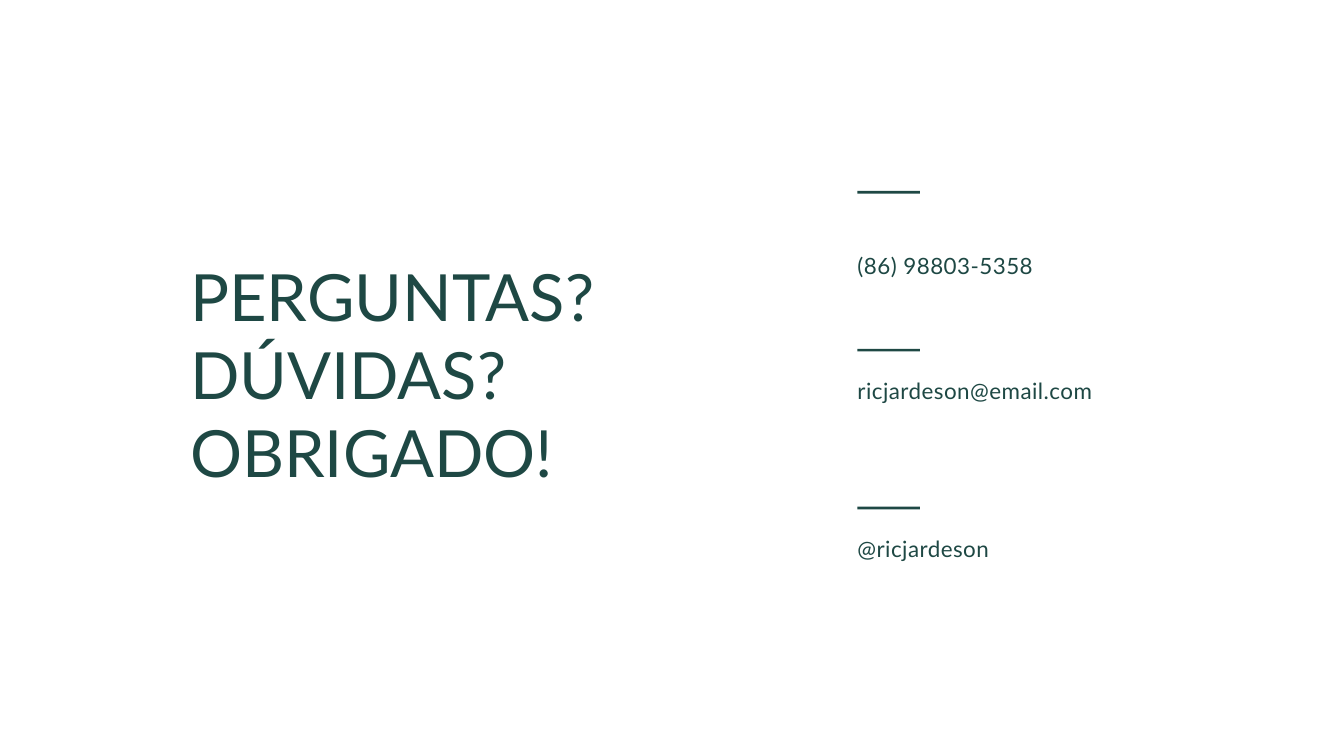
from pptx import Presentation
from pptx.dml.color import RGBColor
from pptx.enum.shapes import MSO_SHAPE as Shape
from pptx.enum.text import MSO_AUTO_SIZE as AutoSize
from pptx.util import Inches, Pt

DARK_GREEN = RGBColor(0x1E, 0x48, 0x44)
WHITE = RGBColor(0xFF, 0xFF, 0xFF)
FONT = "Lato"

CLOSING_LINES = ["PERGUNTAS?", "DÚVIDAS?", "OBRIGADO!"]
# Each contact with the distance from its rule to its text, in inches
CONTACTS = [
    ("(86) 98803-5358", 0.84),
    ("ricjardeson@email.com", 0.36),
    ("@ricjardeson", 0.36),
]


def add_text(slide, box, lines, size, line_spacing, tracking=0):
    """Add one paragraph per line; box is in inches, the other lengths in points."""
    text_box = slide.shapes.add_textbox(*map(Inches, box))
    frame = text_box.text_frame
    frame.word_wrap = True
    frame.auto_size = AutoSize.SHAPE_TO_FIT_TEXT
    frame.margin_left = frame.margin_right = 0
    frame.margin_top = frame.margin_bottom = 0
    frame.text = "\n".join(lines)
    for paragraph in frame.paragraphs:
        paragraph.line_spacing = Pt(line_spacing)
        for run in paragraph.runs:
            run.font.name = FONT
            run.font.size = Pt(size)
            run.font.color.rgb = DARK_GREEN
            if tracking:
                run._r.get_or_add_rPr().set("spc", str(round(tracking * 100)))


def add_closing_message(slide, box):
    add_text(slide, box, CLOSING_LINES, size=69.7, line_spacing=83.6)


def add_contacts(slide, left, top, width, pitch):
    """Stack the contacts at an equal pitch, each under a short rule."""
    for index, (contact, text_offset) in enumerate(CONTACTS):
        rule_top = top + index * pitch
        rule = slide.shapes.add_shape(
            Shape.RECTANGLE, Inches(left), Inches(rule_top), Inches(0.93), Inches(0.04)
        )
        rule.shadow.inherit = False
        rule.fill.solid()
        rule.fill.fore_color.rgb = DARK_GREEN
        rule.line.fill.background()
        add_text(slide, (left, rule_top + text_offset, width, 0.44), [contact],
                 size=24, line_spacing=33.6, tracking=0.5)


def main():
    presentation = Presentation()
    presentation.slide_width = Inches(20)
    presentation.slide_height = Inches(11.25)
    slide = presentation.slides.add_slide(presentation.slide_layouts[6])
    slide.background.fill.solid()
    slide.background.fill.fore_color.rgb = WHITE
    add_closing_message(slide, (2.83, 3.82, 7.92, 3.53))
    add_contacts(slide, left=12.76, top=2.84, width=6.1, pitch=2.35)
    presentation.save("out.pptx")


if __name__ == "__main__":
    main()
